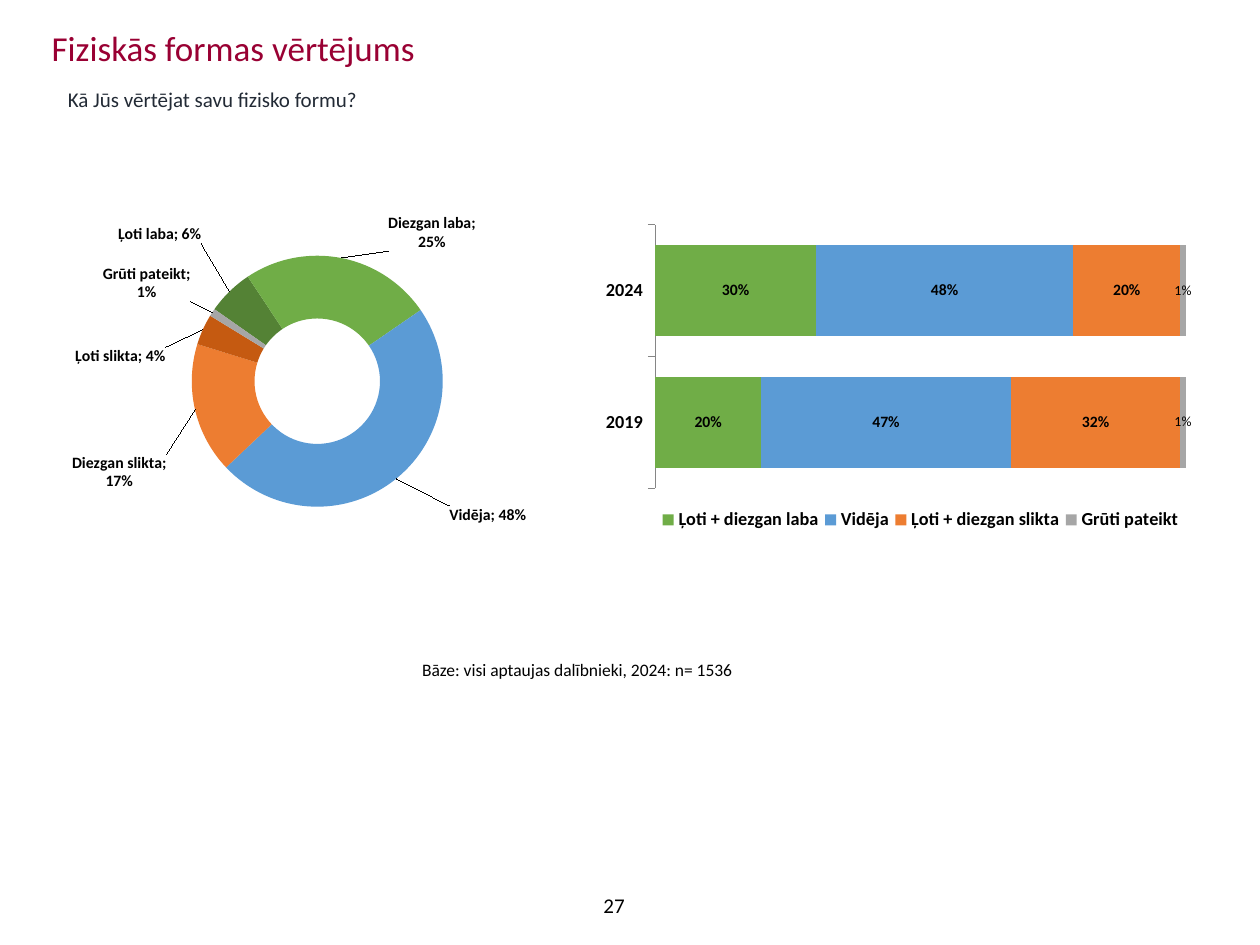
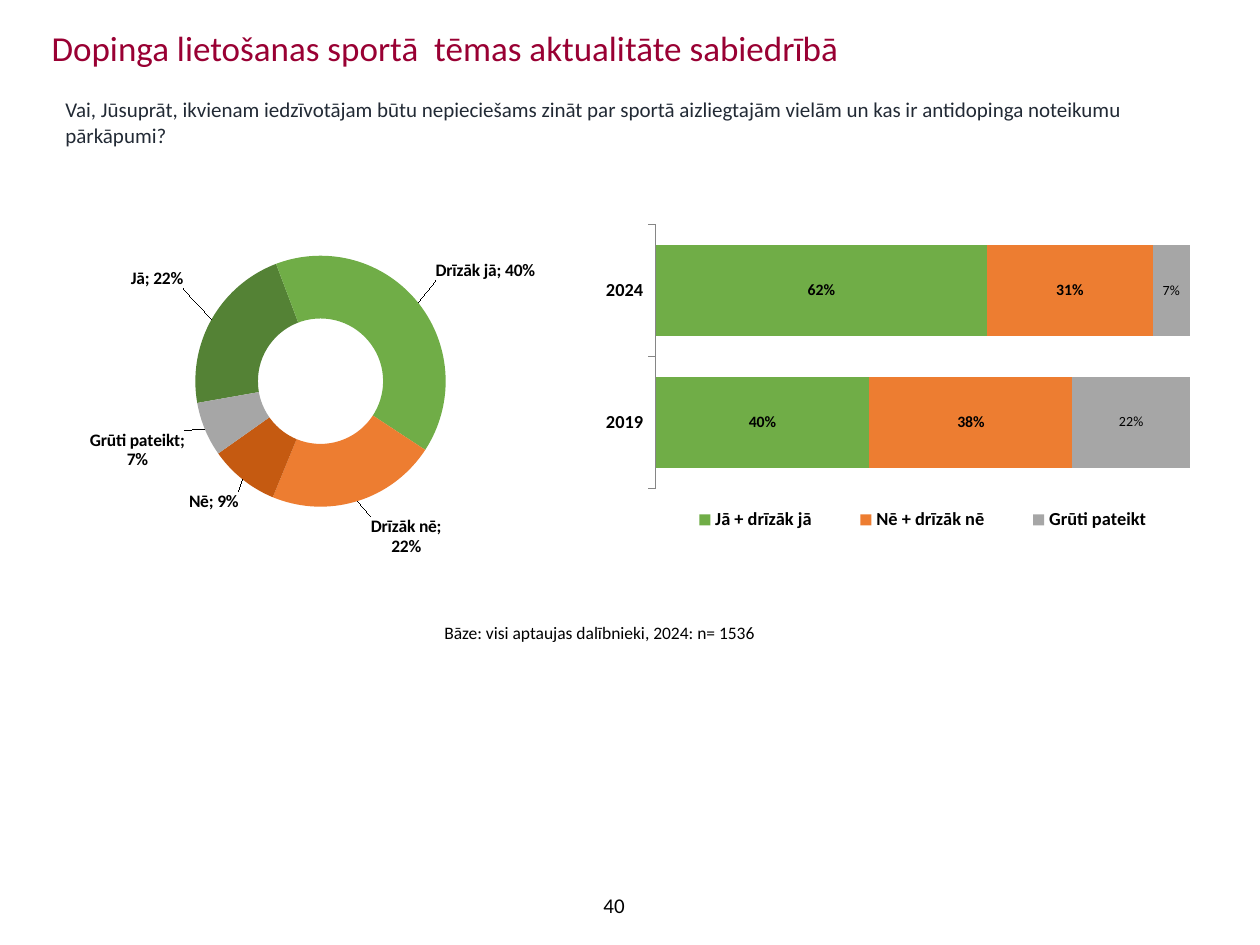
from dataclasses import dataclass
from typing import Optional

from pptx import Presentation
from pptx.chart.chart import Chart
from pptx.chart.data import CategoryChartData
from pptx.dml.color import RGBColor
from pptx.enum.chart import XL_CHART_TYPE as ChartKind
from pptx.enum.chart import XL_LEGEND_POSITION as LegendPos
from pptx.enum.chart import XL_TICK_MARK as TickMark
from pptx.enum.text import MSO_ANCHOR as Anchor
from pptx.enum.text import MSO_AUTO_SIZE as AutoSize
from pptx.enum.text import PP_ALIGN as Align
from pptx.oxml import parse_xml
from pptx.oxml.ns import nsdecls, qn
from pptx.slide import Slide
from pptx.util import Cm, Pt


@dataclass(frozen=True)
class Theme:
    font: str = "Calibri"
    title_color: str = "990033"
    question_color: str = "222A35"
    black: str = "000000"
    axis: str = "868686"
    dark_green: str = "548235"
    green: str = "70AD47"
    blue: str = "5B9BD5"
    orange: str = "ED7D31"
    dark_orange: str = "C55A11"
    gray: str = "A6A6A6"
    title_size: float = 20
    text_size: float = 12
    base_size: float = 10
    chart_size: float = 18
    axis_size: float = 10.5
    bar_label_size: float = 9
    unsure_label_size: float = 8


THEME = Theme()


@dataclass(frozen=True)
class Box:
    left: float
    top: float
    width: float
    height: float

    def cm(self) -> tuple:
        return Cm(self.left), Cm(self.top), Cm(self.width), Cm(self.height)


@dataclass(frozen=True)
class Answer:
    name: str
    share: float
    color: str
    dx: float
    dy: float
    label_width: Optional[float] = None


@dataclass(frozen=True)
class Group:
    name: str
    shares: tuple
    color: str


@dataclass(frozen=True)
class Question:
    title: str
    text: str
    text_box: Box
    base_box: Box
    ring_left: float
    ring_start: int
    ring_label_size: float
    answers: tuple
    groups: tuple
    number: int


BASE_TEXT = "Bāze: visi aptaujas dalībnieki, 2024: n= 1536"
UNSURE = "Grūti pateikt"
YEARS = ("2019", "2024")
TITLE_BOX = Box(0.79, 0.41, 23.8, 1.24)
BAR_BOX = Box(11.84, 4.5, 12.19, 6.4)
NUMBER_BOX = Box(9.42, 17.73, 5.92, 1.02)

QUESTIONS = (
    Question(
        title="Fiziskās formas vērtējums",
        text="Kā Jūs vērtējat savu fizisko formu?",
        text_box=Box(1.12, 1.63, 21.51, 0.94),
        base_box=Box(8.26, 13.16, 6.86, 0.69),
        ring_left=0.99,
        ring_start=305,
        ring_label_size=9,
        answers=(
            Answer("Ļoti laba", 0.06, THEME.dark_green, -0.19, -0.17),
            Answer("Diezgan laba", 0.25, THEME.green, 0.2, -0.12),
            Answer("Vidēja", 0.48, THEME.blue, 0.23, 0.13),
            Answer("Diezgan slikta", 0.17, THEME.orange, -0.22, 0.15),
            Answer("Ļoti slikta", 0.04, THEME.dark_orange, -0.23, 0.03),
            Answer(UNSURE, 0.01, THEME.gray, -0.19, -0.1),
        ),
        groups=(
            Group("Ļoti + diezgan laba", (0.2, 0.3), THEME.green),
            Group("Vidēja", (0.47, 0.48), THEME.blue),
            Group("Ļoti + diezgan slikta", (0.32, 0.2), THEME.orange),
            Group(UNSURE, (0.01, 0.01), THEME.gray),
        ),
        number=27,
    ),
    Question(
        title="Dopinga lietošanas sportā  tēmas aktualitāte sabiedrībā",
        text="Vai, Jūsuprāt, ikvienam iedzīvotājam būtu nepieciešams zināt par sportā "
             "aizliegtajām vielām un kas ir antidopinga noteikumu pārkāpumi?",
        text_box=Box(1.07, 1.83, 23.8, 1.47),
        base_box=Box(8.71, 12.42, 6.86, 0.69),
        ring_left=1.07,
        ring_start=260,
        ring_label_size=10,
        answers=(
            Answer("Jā", 0.22, THEME.dark_green, -0.17, -0.12),
            Answer("Drīzāk jā", 0.4, THEME.green, 0.19, -0.11, 0.24),
            Answer("Drīzāk nē", 0.22, THEME.orange, 0.12, 0.14),
            Answer("Nē", 0.09, THEME.dark_orange, -0.1, 0.1),
            Answer(UNSURE, 0.07, THEME.gray, -0.2, 0.07),
        ),
        groups=(
            Group("Jā + drīzāk jā", (0.4, 0.62), THEME.green),
            Group("Nē + drīzāk nē", (0.38, 0.31), THEME.orange),
            Group(UNSURE, (0.22, 0.07), THEME.gray),
        ),
        number=40,
    ),
)


def style_font(font, size: float, color: str = THEME.black, bold: bool = False) -> None:
    font.name = THEME.font
    font.size = Pt(size)
    font.bold = bold
    font.color.rgb = RGBColor.from_string(color)


def paint(fill, color: str) -> None:
    fill.solid()
    fill.fore_color.rgb = RGBColor.from_string(color)


def add_text(slide: Slide, box: Box, text: str, size: float, color: str = THEME.black,
             align: Align = Align.LEFT, anchor: Anchor = Anchor.TOP, wrap: bool = True) -> None:
    tf = slide.shapes.add_textbox(*box.cm()).text_frame
    tf.word_wrap = wrap
    tf.auto_size = AutoSize.NONE if wrap else AutoSize.SHAPE_TO_FIT_TEXT
    tf.vertical_anchor = anchor
    p = tf.paragraphs[0]
    p.text = text
    p.alignment = align
    style_font(p.font, size, color)


def place(element, index: int, **values) -> None:
    for old in element.findall(qn("c:layout")):
        element.remove(old)
    parts = "".join(f'<c:{tag} val="{value}"/>' for tag, value in values.items())
    element.insert(index, parse_xml(
        f'<c:layout {nsdecls("c")}><c:manualLayout>{parts}</c:manualLayout></c:layout>'))


def add_chart(slide: Slide, kind: ChartKind, box: Box, names: tuple, series: tuple,
              plot: tuple) -> Chart:
    data = CategoryChartData(number_format="0%")
    data.categories = names
    for name, values in series:
        data.add_series(name, values)
    chart = slide.shapes.add_chart(kind, *box.cm(), data).chart
    chart.has_title = False
    chart.has_legend = False
    style_font(chart.font, THEME.chart_size)
    chart.plots[0].vary_by_categories = False
    x, y, w, h = plot
    place(chart._chartSpace.xpath(".//c:plotArea")[0], 0, layoutTarget="inner",
          xMode="edge", yMode="edge", x=x, y=y, w=w, h=h)
    return chart


def add_ring(slide: Slide, q: Question) -> None:
    chart = add_chart(slide, ChartKind.DOUGHNUT, Box(q.ring_left, 3.33, 9.75, 9.4),
                      tuple(a.name for a in q.answers),
                      (("Series 1", tuple(a.share for a in q.answers)),),
                      (0.295, 0.194, 0.519, 0.539))
    space = chart._chartSpace
    space.xpath(".//c:firstSliceAng")[0].set("val", str(q.ring_start))
    space.xpath(".//c:holeSize")[0].set("val", "40")
    ser = chart.plots[0].series[0]
    labels = ser.data_labels
    labels.show_value = labels.show_category_name = True
    labels.number_format, labels.number_format_is_linked = "0%", False
    style_font(labels.font, q.ring_label_size, bold=True)
    for i, answer in enumerate(q.answers):
        point = ser.points[i]
        paint(point.format.fill, answer.color)
        style_font(point.data_label.font, q.ring_label_size, bold=True)
        label = ser._element.xpath(f'.//c:dLbl[c:idx/@val="{i}"]')[0]
        place(label, 1, x=answer.dx, y=answer.dy)
        label.find(qn("c:showCatName")).set("val", "1")
        label.append(parse_xml(f'<c:separator {nsdecls("c")}>; </c:separator>'))
        if answer.label_width:
            label.append(parse_xml(
                f'<c:extLst {nsdecls("c")}><c:ext uri="{{CE6537A1-D6FC-4f65-9D91-7224C49458BB}}" '
                'xmlns:c15="http://schemas.microsoft.com/office/drawing/2012/chart">'
                f'<c15:layout><c:manualLayout><c:w val="{answer.label_width}"/>'
                '<c:h val="0.07"/></c:manualLayout></c15:layout></c:ext></c:extLst>'))


def add_bars(slide: Slide, q: Question) -> None:
    chart = add_chart(slide, ChartKind.BAR_STACKED_100, BAR_BOX, YEARS,
                      tuple((g.name, g.shares) for g in q.groups),
                      (0.113, 0.005, 0.884, 0.83))
    plot = chart.plots[0]
    plot.gap_width, plot.overlap = 45, 100
    for group, ser in zip(q.groups, plot.series):
        paint(ser.format.fill, group.color)
        unsure = group.name == UNSURE
        ser.data_labels.show_value = True
        style_font(ser.data_labels.font,
                   THEME.unsure_label_size if unsure else THEME.bar_label_size, bold=not unsure)
    years = chart.category_axis
    years.major_tick_mark = TickMark.OUTSIDE
    years.has_major_gridlines = False
    years.format.line.color.rgb = RGBColor.from_string(THEME.axis)
    style_font(years.tick_labels.font, THEME.axis_size, bold=True)
    shares = chart.value_axis
    shares.minimum_scale, shares.maximum_scale = 0, 1
    shares.has_major_gridlines = False
    shares.visible = False
    chart.has_legend = True
    legend = chart.legend
    legend.position = LegendPos.RIGHT
    legend.include_in_layout = False
    style_font(legend.font, THEME.axis_size, bold=True)
    place(chart._chartSpace.xpath(".//c:legend")[0], 1, xMode="edge", yMode="edge",
          x=0.115, y=0.88, w=0.88, h=0.11)


def add_question(prs: Presentation, q: Question) -> None:
    slide = prs.slides.add_slide(prs.slide_layouts[6])
    add_text(slide, TITLE_BOX, q.title, THEME.title_size, THEME.title_color)
    add_text(slide, q.text_box, q.text, THEME.text_size, THEME.question_color)
    add_bars(slide, q)
    add_ring(slide, q)
    add_text(slide, q.base_box, BASE_TEXT, THEME.base_size, wrap=False)
    add_text(slide, NUMBER_BOX, str(q.number), THEME.text_size,
             align=Align.CENTER, anchor=Anchor.MIDDLE)


def main() -> None:
    prs = Presentation()
    prs.slide_width, prs.slide_height = Cm(25.4), Cm(19.05)
    for question in QUESTIONS:
        add_question(prs, question)
    prs.save("out.pptx")


if __name__ == "__main__":
    main()
